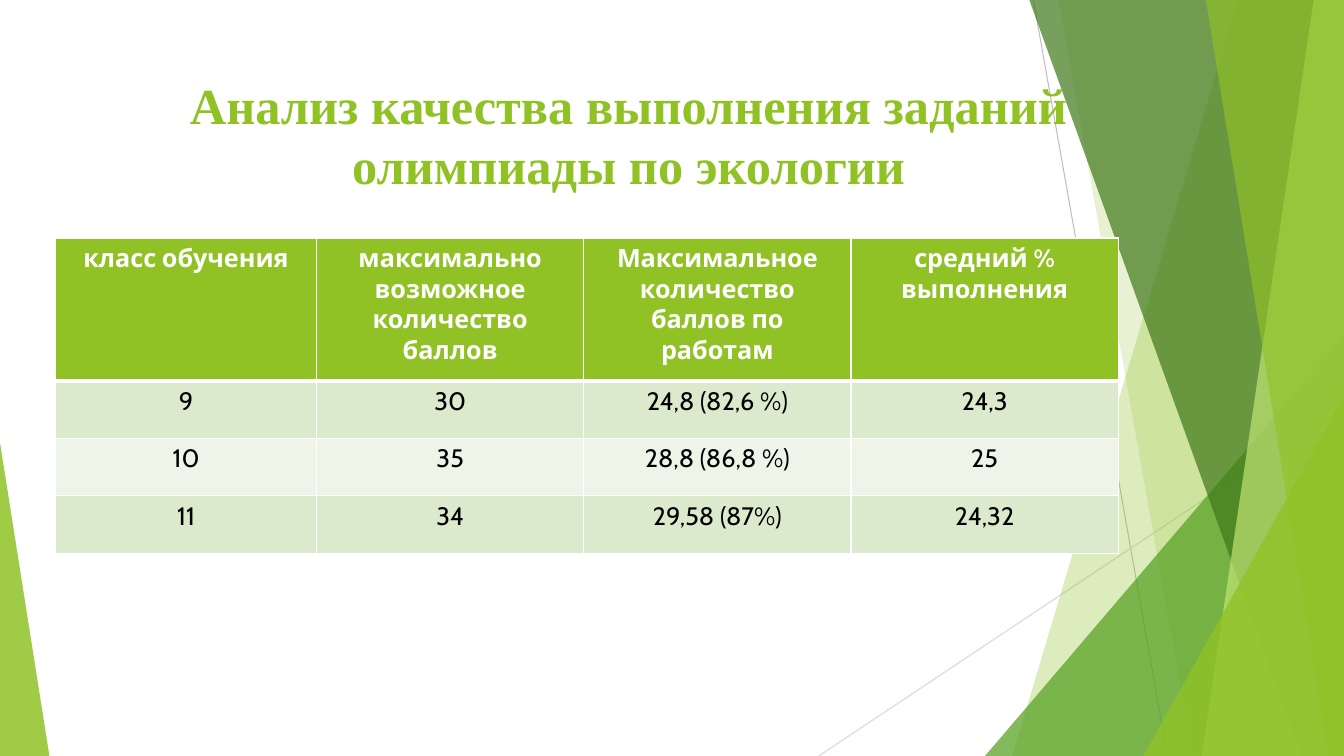
from dataclasses import dataclass

from lxml import etree
from pptx import Presentation
from pptx import util as u
from pptx.dml.color import RGBColor
from pptx.enum import shapes, text
from pptx.oxml.ns import qn


@dataclass(frozen=True)
class Theme:
    green: str = "90C226"
    leaf: str = "54A021"
    forest: str = "3F7819"
    lime: str = "C0E474"
    grey: str = "BFBFBF"
    pale_grey: str = "D9D9D9"
    white: str = "FFFFFF"
    black: str = "000000"
    bands: tuple = ("DBE9CD", "EEF4E8")
    title_font: str = "Times New Roman"
    body_font: str = "Cabin"
    title_size: int = 36
    body_size: int = 18


T = Theme()
WIDTH, HEIGHT = u.Inches(13.33), u.Inches(7.5)

TITLE = "Анализ качества выполнения заданий олимпиады по экологии"
ROWS = [
    ("класс обучения", "максимально возможное количество баллов",
     "Максимальное количество баллов по работам", "средний % выполнения"),
    ("9", "30", "24,8 (82,6 %)", "24,3"),
    ("10", "35", "28,8 (86,8 %)", "25"),
    ("11", "34", "29,58 (87%)", "24,32"),
]


# Lengths are percentages of the slide's width and height
def px(share):
    return round(WIDTH * share / 100)


def py(share):
    return round(HEIGHT * share / 100)


def paint(sp, color, opacity):
    sp.shadow.inherit = False
    sp.line.fill.background()
    sp.fill.solid()
    sp.fill.fore_color.rgb = RGBColor.from_string(color)
    clr = sp.fill._xPr.find(qn("a:solidFill"))[0]
    etree.SubElement(clr, qn("a:alpha")).set("val", str(opacity * 1000))


def add_line(s, x1, y1, x2, y2, color):
    ln = s.shapes.add_connector(shapes.MSO_CONNECTOR.STRAIGHT,
                                px(x1), py(y1), px(x2), py(y2))
    ln.line.color.rgb = RGBColor.from_string(color)
    ln.line.width = u.Pt(0.75)
    etree.SubElement(ln._element.spPr, qn("a:effectLst"))


def add_wedge(s, top_x, bottom_x, color, opacity):
    """Full-height band from a slanted left side to the right slide edge."""
    fb = s.shapes.build_freeform(px(top_x), 0)
    fb.add_line_segments([(WIDTH, 0), (WIDTH, HEIGHT), (px(bottom_x), HEIGHT)])
    paint(fb.convert_to_shape(), color, opacity)


def add_triangle(s, left, top, right, apex, color, opacity):
    """Triangle standing on the bottom edge of the slide."""
    sp = s.shapes.add_shape(shapes.MSO_SHAPE.ISOSCELES_TRIANGLE, px(left),
                            py(top), px(right - left), py(100 - top))
    sp.adjustments[0] = apex
    paint(sp, color, opacity)


def style_paragraph(p, font, size, color, bold):
    p.alignment = text.PP_ALIGN.CENTER
    p.font.name = font
    p.font.size = u.Pt(size)
    p.font.bold = bold
    p.font.color.rgb = RGBColor.from_string(color)


def add_title(s):
    tf = s.shapes.add_textbox(px(5.55), py(8.93), px(82.45), py(17.73)).text_frame
    tf.word_wrap = True
    tf.vertical_anchor = text.MSO_ANCHOR.MIDDLE
    p = tf.paragraphs[0]
    p.text = TITLE
    style_paragraph(p, T.title_font, T.title_size, T.green, True)


def border_cell(cell, widths):
    tc_pr = cell._tc.get_or_add_tcPr()
    for i, (side, width) in enumerate(widths.items()):
        ln = etree.Element(qn(f"a:ln{side}"), w=str(u.Pt(width)))
        fill = etree.SubElement(ln, qn("a:solidFill"))
        etree.SubElement(fill, qn("a:srgbClr")).set("val", T.white)
        tc_pr.insert(i, ln)


def add_results(s):
    col_widths = [19.43] + [19.88] * 3
    row_heights = [18.93] + [7.6] * 3
    table = s.shapes.add_table(len(ROWS), len(col_widths), px(4.13), py(31.47),
                               px(sum(col_widths)), py(sum(row_heights))).table
    for col, width in zip(table.columns, col_widths):
        col.width = px(width)
    for r, values in enumerate(ROWS):
        table.rows[r].height = py(row_heights[r])
        header = r == 0
        for c, value in enumerate(values):
            cell = table.cell(r, c)
            cell.text = value
            cell.fill.solid()
            fill = T.green if header else T.bands[(r - 1) % 2]
            cell.fill.fore_color.rgb = RGBColor.from_string(fill)
            border_cell(cell, {"L": 1, "R": 1, "T": 3 if r == 1 else 1,
                               "B": 3 if header else 1})
            style_paragraph(cell.text_frame.paragraphs[0], T.body_font,
                            T.body_size, T.white if header else T.black, header)


def add_decor(s):
    # Thin crossing lines
    add_line(s, 76.89, 0, 86.87, 100, T.grey)
    add_line(s, 100, 53.73, 60.92, 100, T.pale_grey)
    # Translucent facets, back to front
    add_wedge(s, 92.12, 75.32, T.green, 30)
    add_wedge(s, 78.77, 88.75, T.green, 20)
    add_triangle(s, 73.29, 44.4, 100, 1, T.leaf, 72)
    add_wedge(s, 76.59, 96.85, T.forest, 70)
    add_wedge(s, 97.75, 89.42, T.lime, 70)
    add_wedge(s, 89.72, 98.87, T.green, 65)
    add_triangle(s, 85.07, 52.4, 100, 1, T.green, 80)
    # Left corner
    add_triangle(s, 0, 58.53, 3.68, 0, T.green, 85)


def main():
    prs = Presentation()
    prs.slide_width, prs.slide_height = WIDTH, HEIGHT
    s = prs.slides.add_slide(prs.slide_layouts[6])
    add_decor(s)
    add_title(s)
    add_results(s)
    prs.save("out.pptx")


if __name__ == "__main__":
    main()
